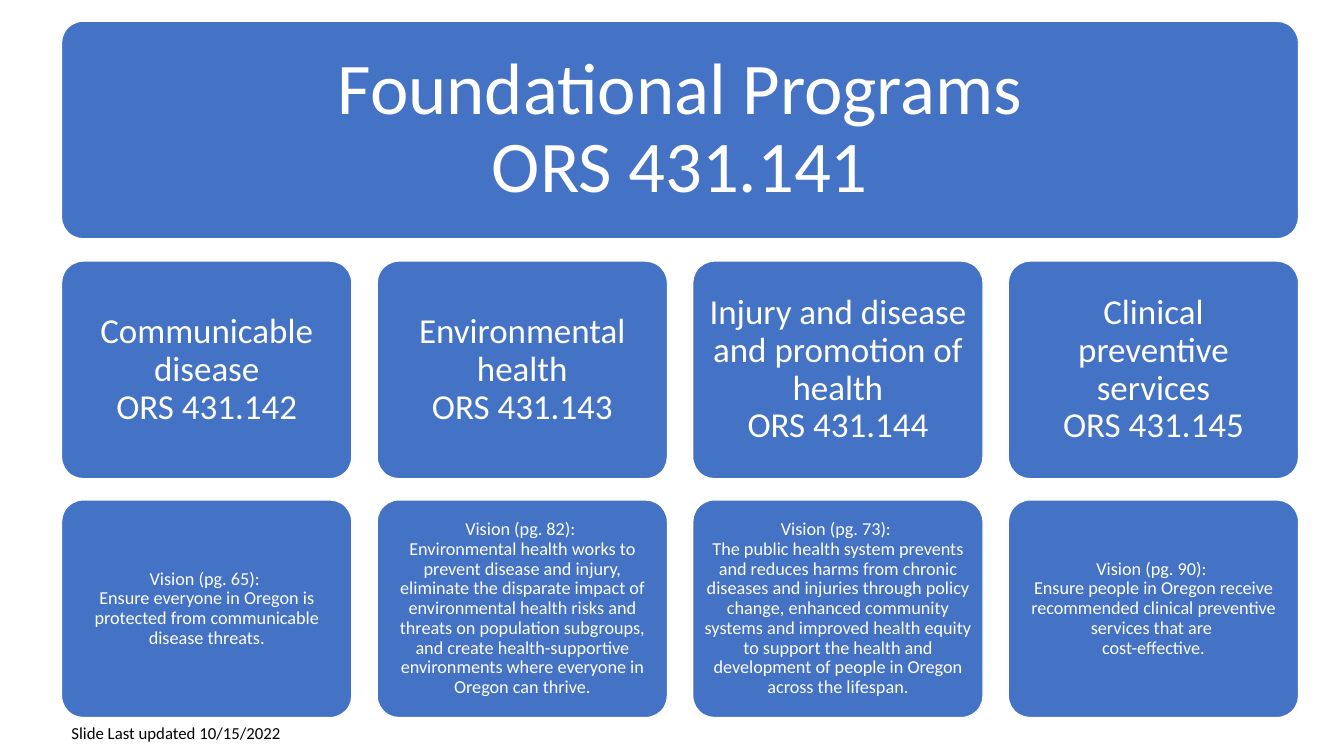
from copy import deepcopy
from dataclasses import dataclass

from pptx import Presentation
from pptx.dml.color import RGBColor
from pptx.enum.shapes import MSO_SHAPE
from pptx.enum.text import MSO_ANCHOR, PP_ALIGN
from pptx.oxml.ns import qn
from pptx.slide import Slide
from pptx.text.text import TextFrame
from pptx.util import Inches, Pt

BLUE = RGBColor(0x44, 0x72, 0xC4)
WHITE = RGBColor(0xFF, 0xFF, 0xFF)
BLACK = RGBColor(0x00, 0x00, 0x00)
FONT = "Calibri"

LEFT = 0.61
COLUMN_STEP = 3.13
CARD_WIDTH = 2.88
CARD_HEIGHT = 2.16
TITLE_TOP, PROGRAM_TOP, VISION_TOP = 0.21, 2.59, 4.96


@dataclass(frozen=True)
class CardStyle:
    top: float
    width: float
    size: int
    inset: float


@dataclass(frozen=True)
class Program:
    name: str
    statute: str
    page: int
    vision: str


TITLE = CardStyle(TITLE_TOP, 3 * COLUMN_STEP + CARD_WIDTH, 52, 0.22)
PROGRAM = CardStyle(PROGRAM_TOP, CARD_WIDTH, 25, 0.1)
VISION = CardStyle(VISION_TOP, CARD_WIDTH, 13, 0.05)

PROGRAMS = [
    Program(
        "Communicable disease", "ORS 431.142", 65,
        "Ensure everyone in Oregon is protected from communicable disease threats.",
    ),
    Program(
        "Environmental health", "ORS 431.143", 82,
        "Environmental health works to prevent disease and injury, eliminate the "
        "disparate impact of environmental health risks and threats on population "
        "subgroups, and create health-supportive environments where everyone in "
        "Oregon can thrive.",
    ),
    Program(
        "Injury and disease and promotion of health", "ORS 431.144", 73,
        "The public health system prevents and reduces harms from chronic diseases "
        "and injuries through policy change, enhanced community systems and improved "
        "health equity to support the health and development of people in Oregon "
        "across the lifespan.",
    ),
    Program(
        "Clinical preventive services", "ORS 431.145", 90,
        "Ensure people in Oregon receive recommended clinical preventive services "
        "that are \vcost-effective.",
    ),
]


def write_text(tf: TextFrame, text: str, size: int, color: RGBColor) -> None:
    tf.word_wrap = True
    p = tf.paragraphs[0]
    p.text = text
    for r in p.runs:
        r.font.name = FONT
        r.font.size = Pt(size)
        r.font.color.rgb = color
    for br in p._p.findall(qn("a:br")):
        br.append(deepcopy(p.runs[0]._r.rPr))


def add_card(s: Slide, style: CardStyle, left: float, text: str) -> None:
    sp = s.shapes.add_shape(
        MSO_SHAPE.ROUNDED_RECTANGLE,
        Inches(left), Inches(style.top), Inches(style.width), Inches(CARD_HEIGHT),
    )
    sp.adjustments[0] = 0.1
    sp.shadow.inherit = False
    sp.fill.solid()
    sp.fill.fore_color.rgb = BLUE
    sp.line.color.rgb = WHITE
    sp.line.width = Pt(1)

    tf = sp.text_frame
    tf.vertical_anchor = MSO_ANCHOR.MIDDLE
    tf.margin_left = tf.margin_right = Inches(style.inset)
    tf.margin_top = tf.margin_bottom = Inches(style.inset)
    write_text(tf, text, style.size, WHITE)
    p = tf.paragraphs[0]
    p.alignment = PP_ALIGN.CENTER
    p.line_spacing = 0.9


def add_update_note(s: Slide) -> None:
    sp = s.shapes.add_textbox(Inches(LEFT), Inches(7.12), Inches(4.02), Inches(0.3))
    write_text(sp.text_frame, "Slide Last updated 10/15/2022", 12, BLACK)


def main() -> None:
    prs = Presentation()
    prs.slide_width = Inches(13.33)
    prs.slide_height = Inches(7.5)
    s = prs.slides.add_slide(prs.slide_layouts[6])

    add_card(s, TITLE, LEFT, "Foundational Programs\vORS 431.141")
    for column, program in enumerate(PROGRAMS):
        left = LEFT + column * COLUMN_STEP
        add_card(s, PROGRAM, left, f"{program.name}\v{program.statute}")
        add_card(s, VISION, left, f"Vision (pg. {program.page}): \v{program.vision}")
    add_update_note(s)

    prs.save("out.pptx")


if __name__ == "__main__":
    main()
